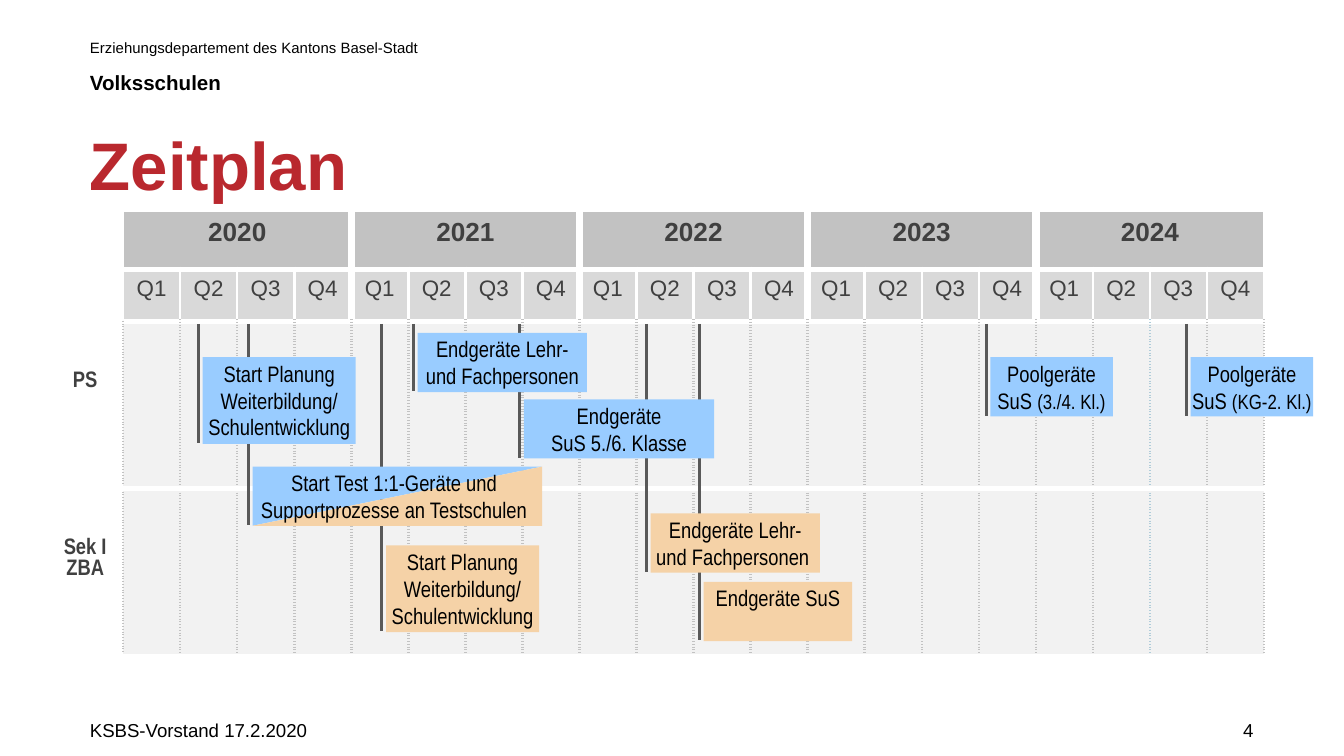
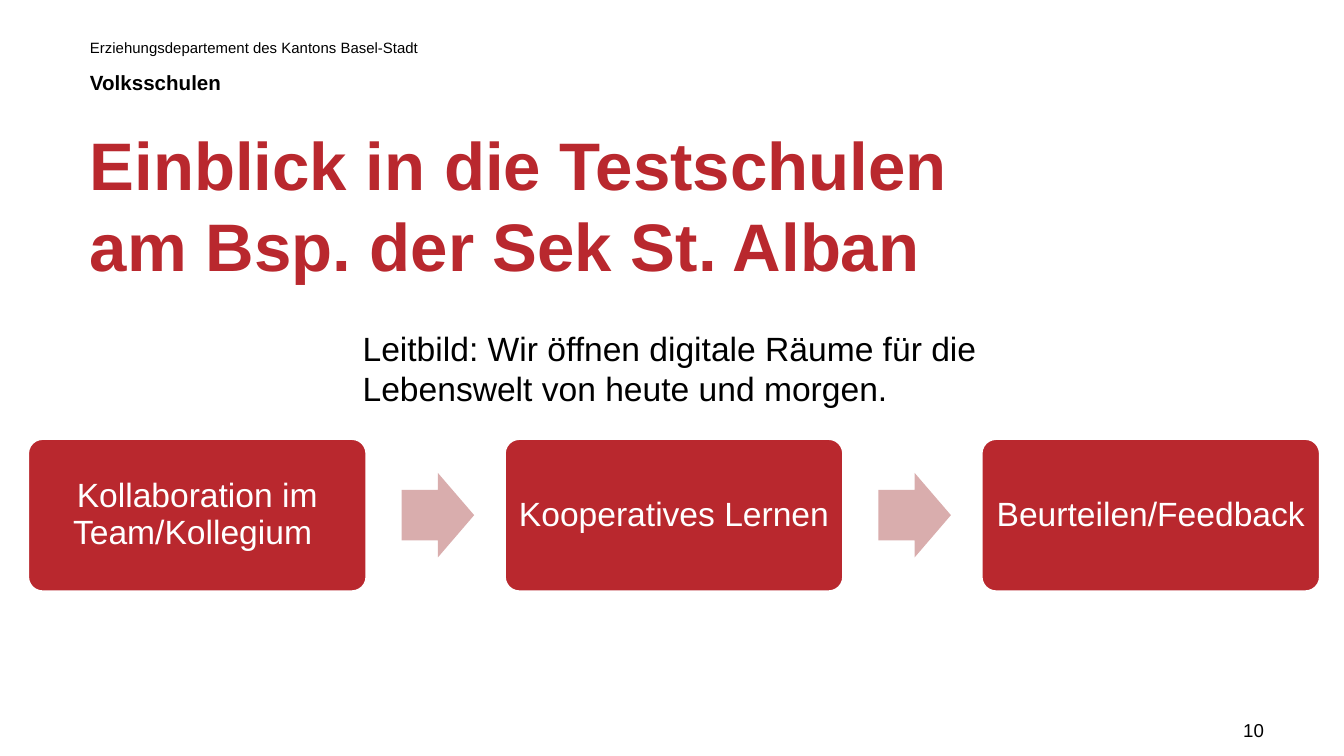
"""Build two slides of a school digitisation talk: timeline and test schools."""
from lxml import etree
from pptx import Presentation
from pptx.dml.color import RGBColor
from pptx.enum.shapes import MSO_CONNECTOR as Connector, MSO_SHAPE as Shape
from pptx.enum.text import MSO_ANCHOR as Anchor, PP_ALIGN as Align
from pptx.oxml.ns import qn
from pptx.util import Pt

RED, BLACK, WHITE, DARK = "B9282E", "000000", "FFFFFF", "404040"
BLUE, ORANGE, ROSE, LINE = "99CCFF", "F5D2A7", "D9ADAD", "595959"
YEAR, QUARTER, BODY, DOTS, DOTS_BLUE = "C2C2C2", "D9D9D9", "F2F2F2", "C2C2C2", "B0CCD9"
NARROW = "Arial Narrow"


def rgb(value):
    return RGBColor.from_string(value)


def write(frame, paragraphs, size, color=BLACK, font="Arial", bold=False,
          align=Align.LEFT, insets=(0, 0, 0, 0)):
    frame.word_wrap = True
    frame.margin_left, frame.margin_top, frame.margin_right, frame.margin_bottom = map(Pt, insets)
    for number, spans in enumerate(paragraphs):
        para = frame.add_paragraph() if number else frame.paragraphs[0]
        para.alignment = align
        for text, changes in spans:
            for index, line in enumerate(text.split("\n")):
                if index:
                    para.add_line_break()
                span = para.add_run()
                span.text = line
                span.font.name = font
                span.font.size = Pt(changes.get("size", size))
                span.font.bold = changes.get("bold", bold)
                span.font.color.rgb = rgb(color)


deck = Presentation()
deck.slide_width, deck.slide_height = Pt(720), Pt(405)
pages = []
for title, title_height, number in (
    ("Zeitplan", 21.6, "4"),
    ("Einblick in die Testschulen \nam Bsp. der Sek St. Alban", 72.7, "10"),
):
    page = deck.slides.add_slide(deck.slide_layouts[6])
    pages.append(page)
    box = page.shapes.add_textbox(Pt(48.2), Pt(20.9), Pt(317.5), Pt(30.2))
    write(box.text_frame, [[("Erziehungsdepartement des Kantons Basel-Stadt", {})],
                           [("Volksschulen", {"size": 11, "bold": True})]], 8)
    box.text_frame.paragraphs[0].space_after = Pt(7)
    box = page.shapes.add_textbox(Pt(48.2), Pt(66.2), Pt(640.8), Pt(title_height))
    write(box.text_frame, [[(title, {})]], 36, RED, bold=True)
    box = page.shapes.add_textbox(Pt(666), Pt(383), Pt(54), Pt(21.6))
    write(box.text_frame, [[(number, {})]], 10, insets=(0, 2.2, 0, 0))

schedule, insight = pages

box = schedule.shapes.add_textbox(Pt(48.2), Pt(383), Pt(156.2), Pt(21.6))
write(box.text_frame, [[("KSBS-Vorstand 17.2.2020", {})]], 10, insets=(0, 2.2, 0, 0))

row_heights = [31, 28.1, 89.4, 89.4]
column_widths = [40.7] + [30.56] * 20
table = schedule.shapes.add_table(4, 21, Pt(25.3), Pt(113.2), Pt(sum(column_widths)),
                                  Pt(sum(row_heights))).table
table.first_row = table.horz_banding = False
for column, width in zip(table.columns, column_widths):
    column.width = Pt(width)
for row, height in zip(table.rows, row_heights):
    row.height = Pt(height)
for first in range(1, 21, 4):
    table.cell(0, first).merge(table.cell(0, first + 3))

for row in range(4):
    for column in range(21):
        cell = table.cell(row, column)
        if cell.is_spanned:
            continue
        edges = []
        for tag, edge in (("a:lnL", column), ("a:lnR", column + cell.span_width)):
            if row > 1 and edge:
                edges.append((tag, DOTS_BLUE if edge == 19 else DOTS, 1.5, "dot"))
            else:
                edges.append((tag, WHITE, 4.5 if edge in (5, 9, 13, 17) else 1.5, "solid"))
        for tag, edge in (("a:lnT", row), ("a:lnB", row + 1)):
            edges.append((tag, WHITE, 3 if column and edge in (1, 2, 3) else 1, "solid"))
        for tag, color, width, dash in edges:
            border = etree.SubElement(cell._tc.get_or_add_tcPr(), qn(tag), w=str(Pt(width)))
            paint = etree.SubElement(border, qn("a:solidFill"))
            etree.SubElement(paint, qn("a:srgbClr"), val=color)
            etree.SubElement(border, qn("a:prstDash"), val=dash)
        if column:
            cell.fill.solid()
            cell.fill.fore_color.rgb = rgb((YEAR, QUARTER, BODY, BODY)[row])
        else:
            cell.fill.background()
        if column and row == 0:
            write(cell.text_frame, [[(str(2020 + column // 4), {})]], 14, DARK,
                  bold=True, align=Align.CENTER)
            cell.margin_top = Pt(3.6)
        elif column and row == 1:
            write(cell.text_frame, [[(f"Q{(column - 1) % 4 + 1}", {})]], 12, DARK)
            cell.margin_left, cell.margin_top, cell.margin_right = Pt(7.2), Pt(3.6), 0
        elif row > 1 and not column:
            labels = (["PS"], ["Sek I", "ZBA"])[row - 2]
            write(cell.text_frame, [[(label, {})] for label in labels], 12, DARK, NARROW,
                  True, Align.CENTER)
            cell.margin_top = Pt(26.4)
            for para in cell.text_frame.paragraphs:
                para.line_spacing = Pt(11.4)
        else:
            cell.margin_top = cell.margin_bottom = 0

planning = [[("Start Planung Weiterbildung/\nSchulentwicklung", {})]]
milestones = [
    (206.8, 292.2, 82, 46.5, ORANGE, planning),
    (377, 311.8, 79.5, 31.7, ORANGE, [[("Endgeräte SuS", {})]]),
    (530.6, 191.4, 65.6, 31.7, BLUE,
     [[("Poolgeräte", {})], [("SuS ", {}), ("(3./4. Kl.)", {"size": 11})]]),
    (108.6, 191.4, 82, 46.5, BLUE, planning),
    (135.4, 250, 155, 31.7, None,
     [[("Start Test 1:1-Geräte und Supportprozesse an Testschulen", {})]]),
    (223.8, 178.4, 90.7, 31.7, BLUE, [[("Endgeräte Lehr-\nund Fachpersonen", {})]]),
    (348.6, 275.1, 90.7, 31.7, ORANGE, [[("Endgeräte Lehr-\nund Fachpersonen ", {})]]),
    (637.9, 191.4, 65.6, 31.7, BLUE,
     [[("Poolgeräte", {})], [("SuS ", {}), ("(KG-2. Kl.)", {"size": 11})]]),
    (280.7, 214, 102, 31.7, BLUE, [[("Endgeräte", {})], [("SuS 5./6. Klasse", {})]]),
]
for left, top, width, height, color, text in milestones:
    marker = schedule.shapes.add_connector(Connector.STRAIGHT, Pt(left - 2.3), Pt(173.5),
                                           Pt(left - 2.3), Pt(top + height - 0.4))
    marker.line.color.rgb = rgb(LINE)
    marker.line.width = Pt(1.5)
    etree.SubElement(marker._element.spPr, qn("a:effectLst"))

for left, top, width, height, color, text in milestones:
    if color:
        box = schedule.shapes.add_shape(Shape.RECTANGLE, Pt(left), Pt(top), Pt(width), Pt(height))
        box.shadow.inherit = False
        box.fill.solid()
        box.fill.fore_color.rgb = rgb(color)
        box.line.fill.background()
    else:
        for half, turn in ((BLUE, 0), (ORANGE, 180)):
            triangle = schedule.shapes.add_shape(Shape.RIGHT_TRIANGLE, Pt(left), Pt(top),
                                                 Pt(width), Pt(height))
            triangle._element.spPr.get_or_add_xfrm().set("flipV", "1")
            triangle.rotation = turn
            triangle.shadow.inherit = False
            triangle.fill.solid()
            triangle.fill.fore_color.rgb = rgb(half)
            triangle.line.fill.background()
        box = schedule.shapes.add_textbox(Pt(left), Pt(top), Pt(width - 3.6), Pt(height))
    box.text_frame.vertical_anchor = Anchor.TOP
    write(box.text_frame, text, 12, font=NARROW, align=Align.CENTER, insets=(0, 1.4, 0, 1.4))

for index, step in enumerate(("Kollaboration im Team/Kollegium ", "Kooperatives Lernen",
                              "Beurteilen/Feedback")):
    left = 14.6 + index * 255.4
    parts = [(Shape.ROUNDED_RECTANGLE, left, 234.7, 182.2, 82.6, [0.1], RED)]
    if index < 2:
        parts.append((Shape.RIGHT_ARROW, left + 200.6, 253.4, 38.8, 45.2, [0.6, 0.5], ROSE))
    for kind, x, y, width, height, adjustments, color in parts:
        part = insight.shapes.add_shape(kind, Pt(x), Pt(y), Pt(width), Pt(height))
        part.shadow.inherit = False
        for position, value in enumerate(adjustments):
            part.adjustments[position] = value
        part.fill.solid()
        part.fill.fore_color.rgb = rgb(color)
        if kind == Shape.RIGHT_ARROW:
            part.line.fill.background()
            continue
        part.line.color.rgb = rgb(WHITE)
        part.line.width = Pt(2)
        part.text_frame.vertical_anchor = Anchor.MIDDLE
        write(part.text_frame, [[(step, {})]], 18, WHITE, align=Align.CENTER, insets=(4, 5, 4, 5))
        part.text_frame.paragraphs[0].line_spacing = 0.9

box = insight.shapes.add_textbox(Pt(187.2), Pt(172), Pt(360), Pt(51))
write(box.text_frame,
      [[("Leitbild: Wir öffnen digitale Räume für die Lebenswelt von heute und morgen.", {})]],
      18, insets=(7.2, 3.6, 7.2, 3.6))

deck.save("out.pptx")
